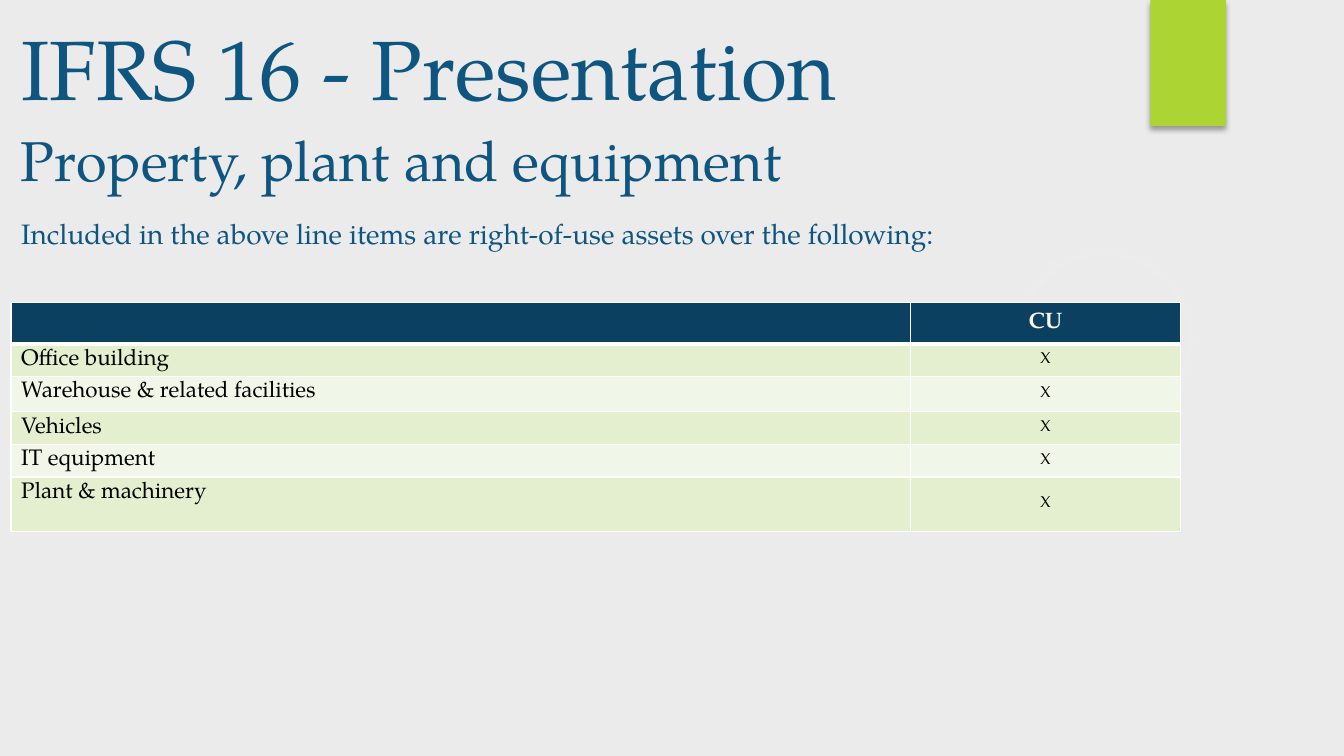
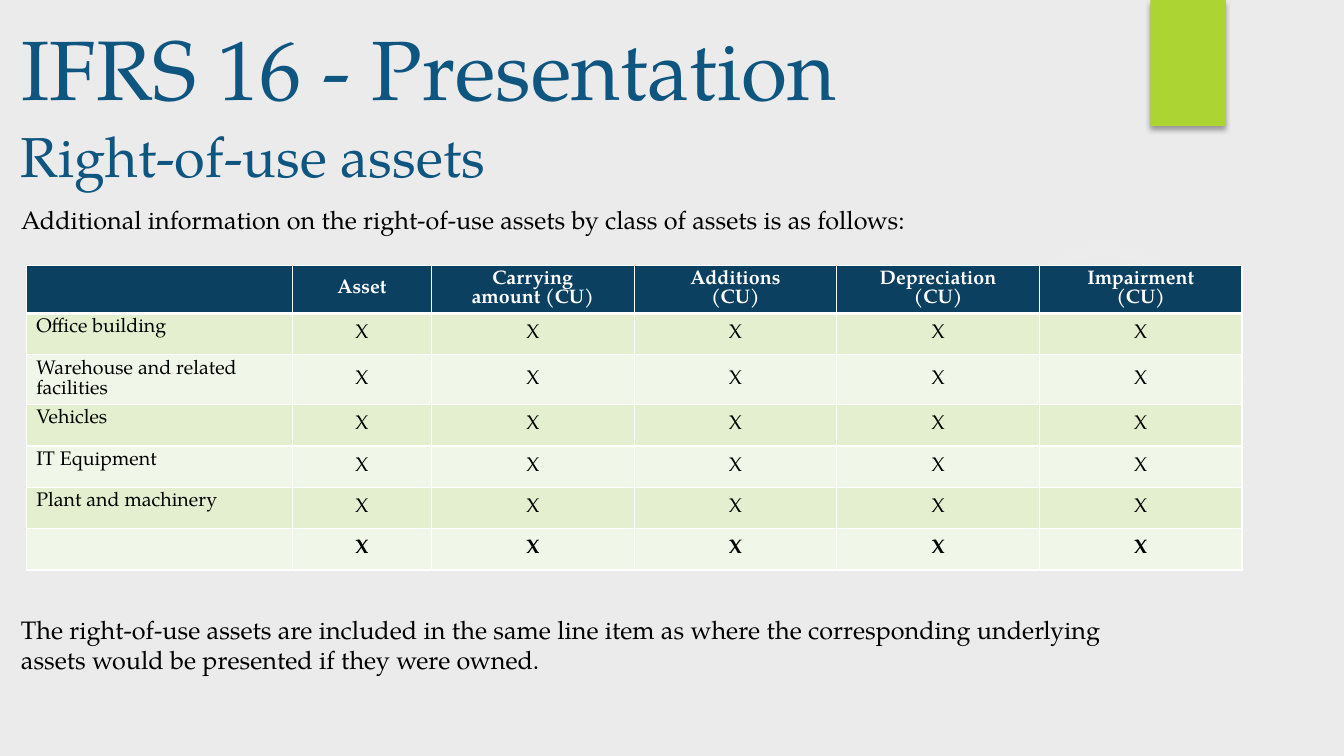
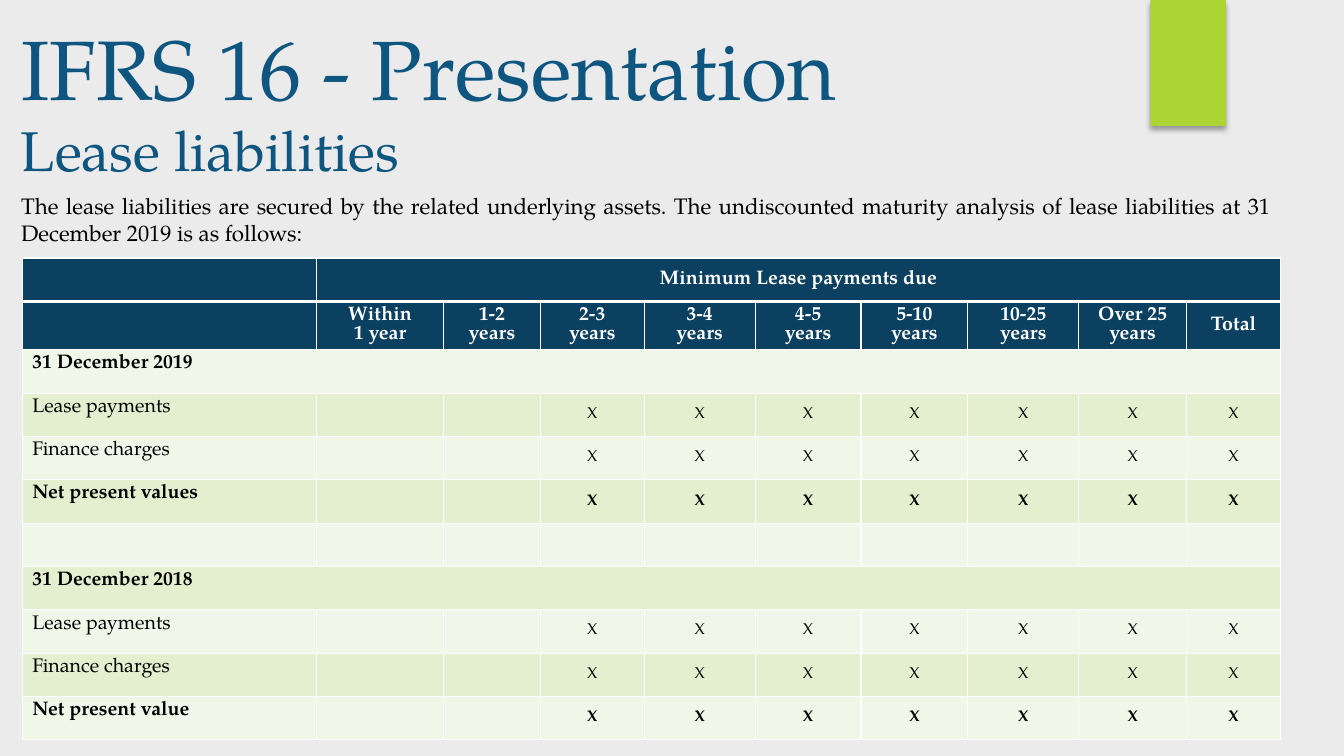
"""Build three slides on presenting leases under IFRS 16."""
from dataclasses import dataclass

from lxml.etree import SubElement
from pptx import Presentation
from pptx.dml.color import RGBColor
from pptx.enum.shapes import MSO_SHAPE
from pptx.enum.text import MSO_ANCHOR, MSO_AUTO_SIZE, PP_ALIGN
from pptx.oxml import parse_xml
from pptx.oxml.ns import nsdecls, qn
from pptx.presentation import Presentation as Deck
from pptx.shapes.autoshape import Shape
from pptx.slide import Slide, SlideLayout
from pptx.table import _Cell
from pptx.text.text import TextFrame
from pptx.util import Emu, Pt

EMU_PER_PX = 9144
FONT = "TeX Gyre Pagella"
PAPER = RGBColor(0xEB, 0xEB, 0xEB)
TITLE_BLUE = RGBColor(0x0E, 0x55, 0x80)
NAVY = RGBColor(0x0B, 0x40, 0x60)
LIME = RGBColor(0xAC, 0xD4, 0x33)
GLOW = RGBColor(0xF7, 0xF7, 0xF7)
BAND_DARK = RGBColor(0xE3, 0xEF, 0xCE)
BAND_LIGHT = RGBColor(0xF1, 0xF7, 0xE8)
WHITE = RGBColor(0xFF, 0xFF, 0xFF)
BLACK = RGBColor(0x00, 0x00, 0x00)


@dataclass(frozen=True)
class Box:
    """A rectangle in px."""
    left: int
    top: int
    width: int
    height: int


@dataclass(frozen=True)
class Style:
    """How the paragraphs of one text look."""
    size: int
    color: RGBColor = BLACK
    bold: bool = False
    align: PP_ALIGN = PP_ALIGN.LEFT


@dataclass(frozen=True)
class Passage:
    """A text with its place and style."""
    text: str
    box: Box
    style: Style


@dataclass(frozen=True)
class Grid:
    """A banded table whose first column holds the row labels."""
    left: int
    top: int
    columns: list[int]
    heights: list[int]
    rows: list[list[str]]
    label_size: int
    mark_size: int
    header_rows: int = 1
    bold_rows: tuple[int, ...] = ()
    spans: tuple[tuple[int, int], ...] = ()


@dataclass(frozen=True)
class Page:
    """The content of one slide."""
    topic: str
    topic_top: int
    intro: Passage
    grid: Grid
    closing: Passage | None = None


TITLE = Passage("IFRS 16 - Presentation", Box(11, 11, 1067, 109), Style(60, TITLE_BLUE))
JUSTIFIED = Style(18, align=PP_ALIGN.JUSTIFY)


def marks(label: str, count: int, blanks: int = 0) -> list[str]:
    """Return a row with a label, blank cells and X marks."""
    return [label] + [""] * blanks + ["X"] * count


def year_rows(year: int, total: str) -> list[list[str]]:
    """Return the maturity rows for one year end."""
    payments = [marks(label, 7, 2) for label in ("Lease payments", "Finance charges", total)]
    return [marks(f"31 December {year}", 0, 9), *payments]


PAGES = [
    Page(
        "Property, plant and equipment", 120,
        Passage("Included in the above line items are right-of-use assets over the following:",
                Box(11, 210, 1104, 63), Style(20, TITLE_BLUE)),
        Grid(11, 300, [892, 268], [41, 32, 35, 32, 32, 54],
             [["", "CU"]] + [marks(label, 1) for label in (
                 "Office building", "Warehouse & related facilities", "Vehicles",
                 "IT equipment", "Plant & machinery")],
             label_size=16, mark_size=11),
    ),
    Page(
        "Right-of-use assets", 116,
        Passage("Additional information on the right-of-use assets by class of assets is as follows:",
                Box(11, 198, 1241, 48), JUSTIFIED),
        Grid(26, 263, [264, 138] + [201] * 4, [48, 41, 49] + [41] * 4,
             [["", "Asset", "Carrying\namount (CU)", "Additions\n(CU)",
               "Depreciation\n(CU)", "Impairment\n(CU)"]]
             + [marks(label, 5) for label in (
                 "Office building", "Warehouse and related\nfacilities", "Vehicles",
                 "IT Equipment", "Plant and machinery", "")],
             label_size=14, mark_size=14, bold_rows=(6,)),
        Passage("The right-of-use assets are included in the same line item as where "
                "the corresponding underlying\nassets would be presented if they were owned.",
                Box(11, 604, 1260, 78), JUSTIFIED),
    ),
    Page(
        "Lease liabilities", 110,
        Passage("The lease liabilities are secured by the related underlying assets. "
                "The undiscounted maturity analysis of lease liabilities at 31 December 2019 "
                "is as follows:",
                Box(11, 186, 1260, 65), Style(16, align=PP_ALIGN.JUSTIFY)),
        Grid(22, 256, [292, 126, 96, 103, 110, 105, 106, 110, 107, 93], [43, 48] + [43] * 9,
             [["", "Minimum Lease payments due"] + [""] * 8,
              ["", "Within\n1 year"]
              + [f"{span}\nyears" for span in ("1-2", "2-3", "3-4", "4-5", "5-10", "10-25", "Over 25")]
              + ["Total"],
              *year_rows(2019, "Net present values"),
              marks("", 0, 9),
              *year_rows(2018, "Net present value")],
             label_size=14, mark_size=11, header_rows=2,
             bold_rows=(2, 5, 7, 10), spans=((0, 1), (2, 0), (7, 0))),
    ),
]


def px(length: int) -> Emu:
    """Turn px into EMU."""
    return Emu(length * EMU_PER_PX)


def bounds(box: Box) -> tuple[Emu, Emu, Emu, Emu]:
    """Return the sides of a box in EMU."""
    return px(box.left), px(box.top), px(box.width), px(box.height)


def place(shape: Shape, box: Box) -> None:
    """Move and size a shape."""
    shape.left, shape.top, shape.width, shape.height = bounds(box)


def write(frame: TextFrame, text: str, style: Style, unbullet: bool = False) -> None:
    """Fill a text frame with one paragraph per line."""
    for index, line in enumerate(text.split("\n")):
        paragraph = frame.add_paragraph() if index else frame.paragraphs[0]
        if unbullet:
            properties = paragraph._p.get_or_add_pPr()
            properties.set("marL", "0")
            properties.set("indent", "0")
            SubElement(properties, qn("a:buNone"))
        paragraph.alignment = style.align
        paragraph.space_before = Pt(0)
        run = paragraph.add_run()
        run.text = line
        run.font.name = FONT
        run.font.size = Pt(style.size)
        run.font.bold = style.bold
        run.font.color.rgb = style.color


def settle(frame: TextFrame) -> None:
    """Wrap the text from the top of its frame without resizing."""
    frame.word_wrap = True
    frame.auto_size = MSO_AUTO_SIZE.NONE
    frame.vertical_anchor = MSO_ANCHOR.TOP


def add_passage(slide: Slide, passage: Passage) -> None:
    """Add a free text."""
    frame = slide.shapes.add_textbox(*bounds(passage.box)).text_frame
    settle(frame)
    write(frame, passage.text, passage.style)


def border_cell(cell: _Cell, row: int) -> None:
    """Draw white cell borders, heavy under the first row."""
    properties = cell._tc.get_or_add_tcPr()
    widths = {"L": 1, "R": 1, "T": 3 if row == 1 else 1, "B": 3 if row == 0 else 1}
    for side, width in widths.items():
        properties.append(parse_xml(
            f'<a:ln{side} {nsdecls("a")} w="{Pt(width)}"><a:solidFill>'
            f'<a:srgbClr val="{WHITE}"/></a:solidFill></a:ln{side}>'))


def fill_cell(cell: _Cell, grid: Grid, row: int, column: int) -> None:
    """Format one table cell and write its text."""
    header = row < grid.header_rows
    border_cell(cell, row)
    cell.fill.solid()
    cell.fill.fore_color.rgb = NAVY if header else BAND_DARK if row % 2 else BAND_LIGHT
    cell.vertical_anchor = MSO_ANCHOR.MIDDLE if column else MSO_ANCHOR.TOP
    text = grid.rows[row][column]
    if text:
        write(cell.text_frame, text, Style(
            size=grid.mark_size if column and not header else grid.label_size,
            color=WHITE if header else BLACK,
            bold=header or row in grid.bold_rows,
            align=PP_ALIGN.CENTER if column else PP_ALIGN.LEFT))


def add_grid(slide: Slide, grid: Grid) -> None:
    """Add a banded table."""
    box = Box(grid.left, grid.top, sum(grid.columns), sum(grid.heights))
    table = slide.shapes.add_table(len(grid.rows), len(grid.columns), *bounds(box)).table
    table.first_row = table.horz_banding = False
    for column, width in zip(table.columns, grid.columns):
        column.width = px(width)
    for row, height in zip(table.rows, grid.heights):
        row.height = px(height)
    for row in range(len(grid.rows)):
        for column in range(len(grid.columns)):
            fill_cell(table.cell(row, column), grid, row, column)
    for row, first in grid.spans:
        table.cell(row, first).merge(table.cell(row, len(grid.columns) - 1))


def add_decor(slide: Slide, layout: SlideLayout) -> None:
    """Draw the glow and the lime tab and hand them to the layout."""
    glow = slide.shapes.add_shape(MSO_SHAPE.OVAL, *bounds(Box(941, 183, 308, 308)))
    glow.shadow.inherit = False
    glow.fill.background()
    stops = "".join(
        f'<a:gs pos="{position}000"><a:srgbClr val="{GLOW}">'
        f'<a:alpha val="{alpha}000"/></a:srgbClr></a:gs>'
        for position, alpha in ((0, 7), (36, 6), (69, 0)))
    properties = glow.element.spPr
    properties.replace(properties.find(qn("a:noFill")), parse_xml(
        f'<a:gradFill {nsdecls("a")}><a:gsLst>{stops}</a:gsLst><a:path path="circle">'
        '<a:fillToRect l="50000" t="50000" r="50000" b="50000"/></a:path></a:gradFill>'))

    tab = slide.shapes.add_shape(MSO_SHAPE.RECTANGLE, *bounds(Box(1141, 0, 75, 125)))
    tab.fill.solid()
    tab.fill.fore_color.rgb = LIME
    tab.shadow.inherit = False
    tab.element.spPr.find(qn("a:effectLst")).append(parse_xml(
        f'<a:outerShdw {nsdecls("a")} blurRad="{Pt(4)}" dist="{Pt(3)}" dir="5400000" '
        f'rotWithShape="0"><a:srgbClr val="{BLACK}"><a:alpha val="35000"/></a:srgbClr></a:outerShdw>'))

    for offset, decor in enumerate((glow, tab)):
        decor.line.fill.background()
        decor.element.nvSpPr.cNvPr.set("id", str(20 + offset))
        layout.element.cSld.spTree.insert(2 + offset, decor.element)


def add_page(deck: Deck, layout: SlideLayout, page: Page) -> Slide:
    """Add one slide."""
    slide = deck.slides.add_slide(layout)
    title = slide.shapes.title
    settle(title.text_frame)
    write(title.text_frame, TITLE.text, TITLE.style)
    add_passage(slide, Passage(page.topic, Box(11, page.topic_top, 831, 82),
                               Style(40, TITLE_BLUE)))
    intro = slide.placeholders[1]
    place(intro, page.intro.box)
    settle(intro.text_frame)
    write(intro.text_frame, page.intro.text, page.intro.style, unbullet=True)
    add_grid(slide, page.grid)
    if page.closing:
        add_passage(slide, page.closing)
    return slide


def main() -> None:
    """Build and save the deck."""
    deck = Presentation()
    deck.slide_width, deck.slide_height = px(1333), px(750)
    background = deck.slide_master.background.fill
    background.solid()
    background.fore_color.rgb = PAPER
    layout = deck.slide_layouts[1]
    place(layout.placeholders[0], TITLE.box)
    slides = [add_page(deck, layout, page) for page in PAGES]
    add_decor(slides[0], layout)
    deck.save("out.pptx")


if __name__ == "__main__":
    main()
